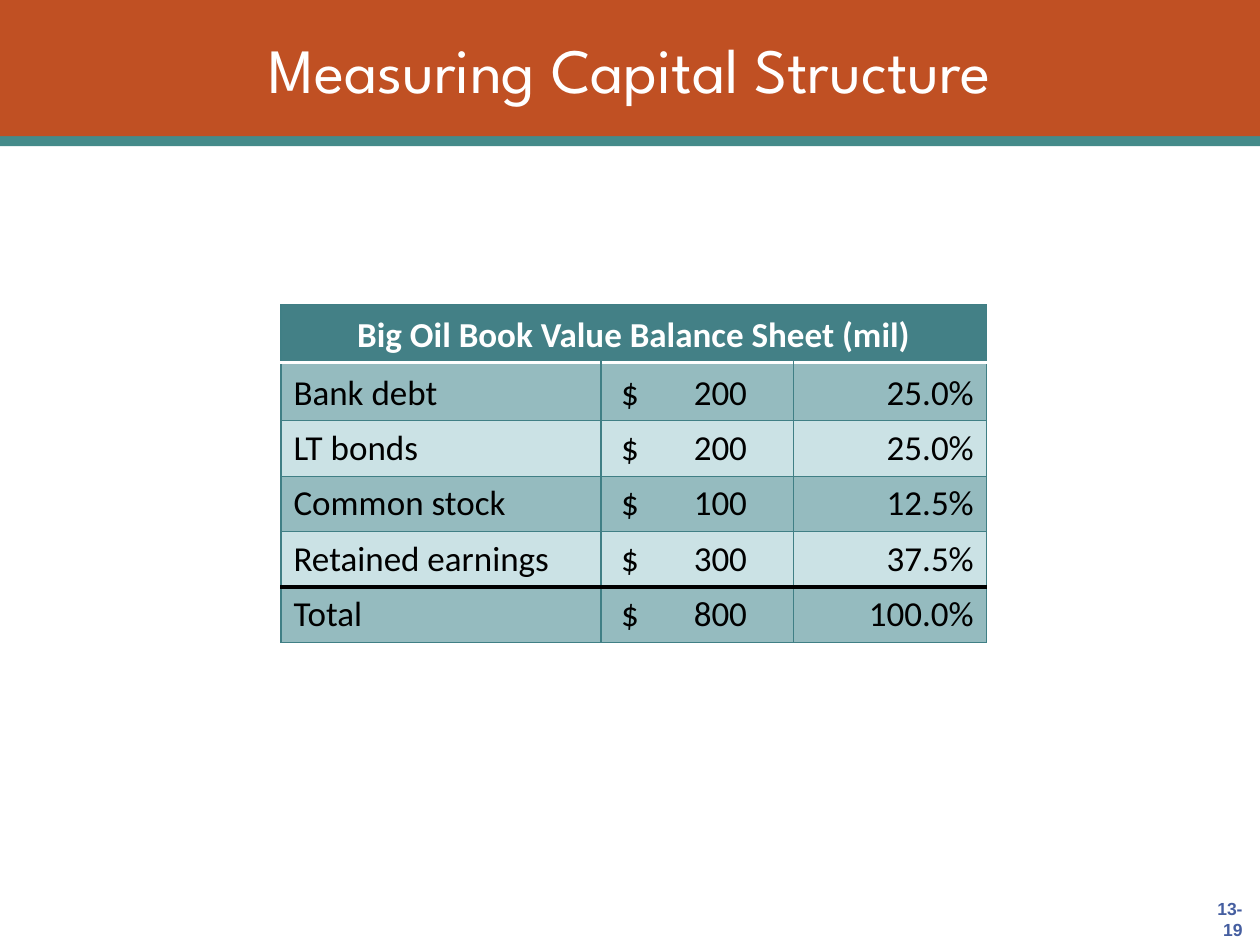
from lxml import etree
from pptx import Presentation
from pptx import util as u
from pptx.dml.color import RGBColor
from pptx.enum import shapes, text
from pptx.oxml.ns import qn

RUST = RGBColor(0xC0, 0x50, 0x23)
TEAL = RGBColor(0x45, 0x8B, 0x8A)
HEADER = RGBColor(0x43, 0x80, 0x86)
GRID = RGBColor(0x40, 0x7F, 0x85)
DARK_BAND = RGBColor(0x95, 0xBB, 0xBF)
LIGHT_BAND = RGBColor(0xCB, 0xE2, 0xE5)
NUMBER_BLUE = RGBColor(0x45, 0x5E, 0xA0)
WHITE = RGBColor(255, 255, 255)
BLACK = RGBColor(0, 0, 0)
LEFT, CENTER, RIGHT = text.PP_ALIGN.LEFT, text.PP_ALIGN.CENTER, text.PP_ALIGN.RIGHT


def write(tf, words, font, size, color, align, bold=False):
    tf.text = words
    p = tf.paragraphs[0]
    p.alignment = align
    f = p.runs[0].font
    f.name, f.size, f.bold = font, u.Pt(size), bold
    f.color.rgb = color
    return p


def border(cell, side, color, width):
    """Draw one side of a cell; call in the order L, R, T, B, before the fill."""
    ln = etree.SubElement(cell._tc.get_or_add_tcPr(), qn(f"a:ln{side}"), w=str(u.Pt(width)))
    fill = etree.SubElement(ln, qn("a:solidFill"))
    etree.SubElement(fill, qn("a:srgbClr"), val=str(color))


prs = Presentation()
prs.slide_width, prs.slide_height = u.Inches(10), u.Inches(7.5)
s = prs.slides.add_slide(prs.slide_layouts[6])

# Title band with a stripe below it
for top, height, color in ((1.08, 0.08, TEAL), (0, 1.08, RUST)):
    sp = s.shapes.add_shape(shapes.MSO_SHAPE.RECTANGLE, 0, u.Inches(top),
                            prs.slide_width, u.Inches(height))
    sp.shadow.inherit = False
    sp.fill.solid()
    sp.fill.fore_color.rgb = color
    sp.line.fill.background()

# Title and slide number
for box, wrap, style in (
    ((0.75, 0.08, 8.5, 0.92), True,
     ("Measuring Capital Structure", "League Spartan", 36, WHITE, CENTER)),
    ((9.46, 7.08, 0.5, 0.42), False,
     ("13- 19", "Arial", 10, NUMBER_BLUE, RIGHT, True)),
):
    tf = s.shapes.add_textbox(*(u.Inches(n) for n in box)).text_frame
    tf.word_wrap = wrap
    tf.vertical_anchor = text.MSO_ANCHOR.MIDDLE
    write(tf, *style)

# Balance sheet
rows = [
    ("Big Oil Book Value Balance Sheet (mil)", "", ""),
    ("Bank debt", "$\t200", "25.0%"),
    ("LT bonds", "$\t200", "25.0%"),
    ("Common stock", "$\t100", "12.5%"),
    ("Retained earnings", "$\t300", "37.5%"),
    ("Total", "$\t800", "100.0%"),
]
widths = (2.54, 1.53, 1.53)
heights = (0.46, 0.46, 0.44, 0.44, 0.44, 0.44)
table = s.shapes.add_table(len(rows), len(widths), u.Inches(2.23), u.Inches(2.42),
                           u.Inches(sum(widths)), u.Inches(sum(heights))).table
for column, width in zip(table.columns, widths):
    column.width = u.Inches(width)
for row, height in zip(table.rows, heights):
    row.height = u.Inches(height)
table.cell(0, 0).merge(table.cell(0, len(widths) - 1))

# Horizontal rules, by the row they lie above
thin = (GRID, 0.75)
rules = {1: (WHITE, 2), len(rows) - 1: (BLACK, 2.25)}

for i, row in enumerate(rows):
    for j, words in enumerate(row):
        cell = table.cell(i, j)
        border(cell, "L", *thin)
        border(cell, "R", *thin)
        border(cell, "T", *rules.get(i, thin))
        border(cell, "B", *rules.get(i + 1, thin))
        cell.fill.solid()
        cell.fill.fore_color.rgb = HEADER if i == 0 else DARK_BAND if i % 2 else LIGHT_BAND
        cell.vertical_anchor = text.MSO_ANCHOR.BOTTOM
        if not words:
            continue
        align = CENTER if i == 0 else RIGHT if j == 2 else LEFT
        p = write(cell.text_frame, words, "Calibri", 20, BLACK if i else WHITE, align, i == 0)
        if j == 1:  # dollar sign on the left, amount on a right tab
            cell.margin_left = u.Inches(0.16)
            tabs = etree.SubElement(p._p.get_or_add_pPr(), qn("a:tabLst"))
            etree.SubElement(tabs, qn("a:tab"), pos=str(u.Inches(1)), algn="r")

prs.save("out.pptx")
